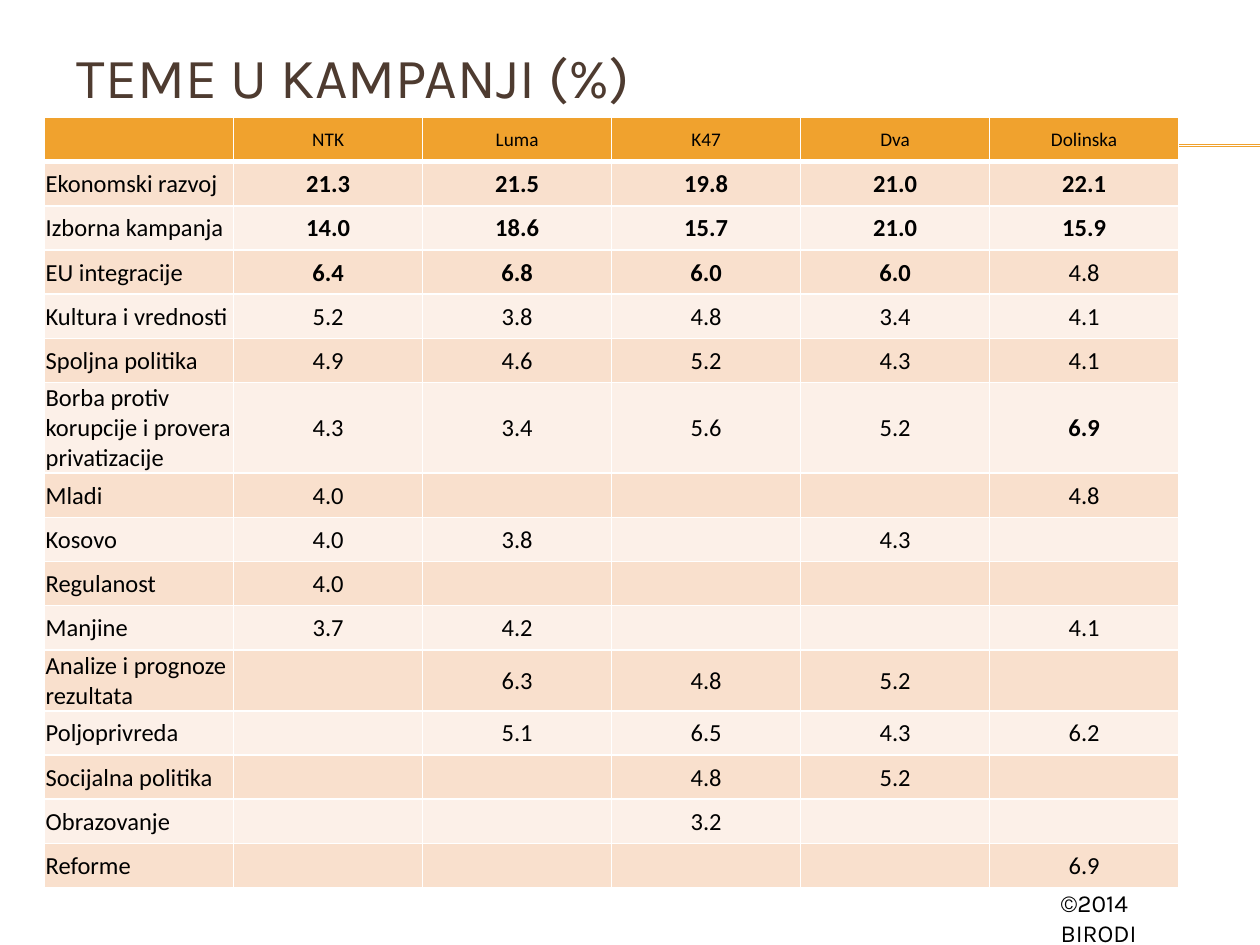
from lxml import etree
from pptx import Presentation
from pptx.dml.color import RGBColor
from pptx.enum.shapes import MSO_CONNECTOR
from pptx.enum.text import MSO_ANCHOR, PP_ALIGN
from pptx.oxml.ns import qn
from pptx.util import Cm, Pt

STRAIGHT = MSO_CONNECTOR.STRAIGHT
MIDDLE = MSO_ANCHOR.MIDDLE
LEFT, CENTER = PP_ALIGN.LEFT, PP_ALIGN.CENTER
ORANGE, PEACH, CREAM = "F0A22E", "F9E0CD", "FCF0E8"
BROWN, BLACK, WHITE = "4E3B30", "000000", "FFFFFF"


def rgb(value):
    return RGBColor.from_string(value)


def set_font(p, name, size, color, bold=False):
    p.font.name = name
    p.font.size = Pt(size)
    p.font.color.rgb = rgb(color)
    p.font.bold = bold


prs = Presentation()
prs.slide_width, prs.slide_height = Cm(25.4), Cm(19.05)
s = prs.slides.add_slide(prs.slide_layouts[6])

for y in (2.92, 2.95):
    line = s.shapes.add_connector(STRAIGHT, Cm(1.42), Cm(y), Cm(25.4), Cm(y))
    line.line.color.rgb = rgb(ORANGE)
    line.line.width = Pt(0.75)
    etree.SubElement(line._element.spPr, qn("a:effectLst"))

sp = s.shapes.add_textbox(Cm(1.3), Cm(0.76), Cm(22.83), Cm(1.55))
tf = sp.text_frame
tf.word_wrap = True
tf.vertical_anchor = MIDDLE
p = tf.paragraphs[0]
p.text = "TEME U KAMPANJI (%)"
set_font(p, "Karla", 32.4, BROWN)

rows = [
    ["", "NTK", "Luma", "K47", "Dva", "Dolinska"],
    ["Ekonomski razvoj", "21.3", "21.5", "19.8", "21.0", "22.1"],
    ["Izborna kampanja", "14.0", "18.6", "15.7", "21.0", "15.9"],
    ["EU integracije", "6.4", "6.8", "6.0", "6.0", "4.8"],
    ["Kultura i vrednosti", "5.2", "3.8", "4.8", "3.4", "4.1"],
    ["Spoljna politika", "4.9", "4.6", "5.2", "4.3", "4.1"],
    ["Borba protiv korupcije i provera privatizacije", "4.3", "3.4", "5.6", "5.2", "6.9"],
    ["Mladi", "4.0", "", "", "", "4.8"],
    ["Kosovo", "4.0", "3.8", "", "4.3", ""],
    ["Regulanost", "4.0", "", "", "", ""],
    ["Manjine", "3.7", "4.2", "", "", "4.1"],
    ["Analize i prognoze rezultata", "", "6.3", "4.8", "5.2", ""],
    ["Poljoprivreda", "", "5.1", "6.5", "4.3", "6.2"],
    ["Socijalna politika", "", "", "4.8", "5.2", ""],
    ["Obrazovanje", "", "", "3.2", "", ""],
    ["Reforme", "", "", "", "", "6.9"],
]
bold_cells = {(i, j) for i in (1, 2, 3) for j in range(1, 6)} - {(3, 5)} | {(6, 5)}
row_heights = {6: 1.83, 11: 1.23}

table = s.shapes.add_table(len(rows), 6, Cm(0.9), Cm(2.37), Cm(22.86), Cm(15.44)).table
for col in table.columns:
    col.width = Cm(3.81)
for i, row in enumerate(rows):
    table.rows[i].height = Cm(row_heights.get(i, 0.89))
    for j, text in enumerate(row):
        cell = table.cell(i, j)
        cell.margin_left = cell.margin_right = cell.margin_top = Cm(0.02)
        cell.margin_bottom = 0
        cell.vertical_anchor = MIDDLE
        cell.fill.solid()
        cell.fill.fore_color.rgb = rgb(ORANGE if i == 0 else PEACH if i % 2 else CREAM)
        p = cell.text_frame.paragraphs[0]
        p.text = text
        p.alignment = CENTER if j else LEFT
        set_font(p, "Calibri", 14 if i else 11, BLACK, (i, j) in bold_cells)
        tcPr = cell._tc.get_or_add_tcPr()
        for k, side in enumerate(("lnL", "lnR", "lnT", "lnB")):
            thick = (i, side) in ((0, "lnB"), (1, "lnT"))
            ln = etree.Element(qn(f"a:{side}"), w=str(Pt(3 if thick else 1)))
            fill = etree.SubElement(ln, qn("a:solidFill"))
            etree.SubElement(fill, qn("a:srgbClr"), val=WHITE)
            tcPr.insert(k, ln)

sp = s.shapes.add_textbox(Cm(21.13), Cm(17.78), Cm(3.48), Cm(0.86))
tf = sp.text_frame
tf.word_wrap = True
p = tf.paragraphs[0]
p.text = "©2014 BIRODI"
set_font(p, "Karla", 14, BLACK)

prs.save("out.pptx")
